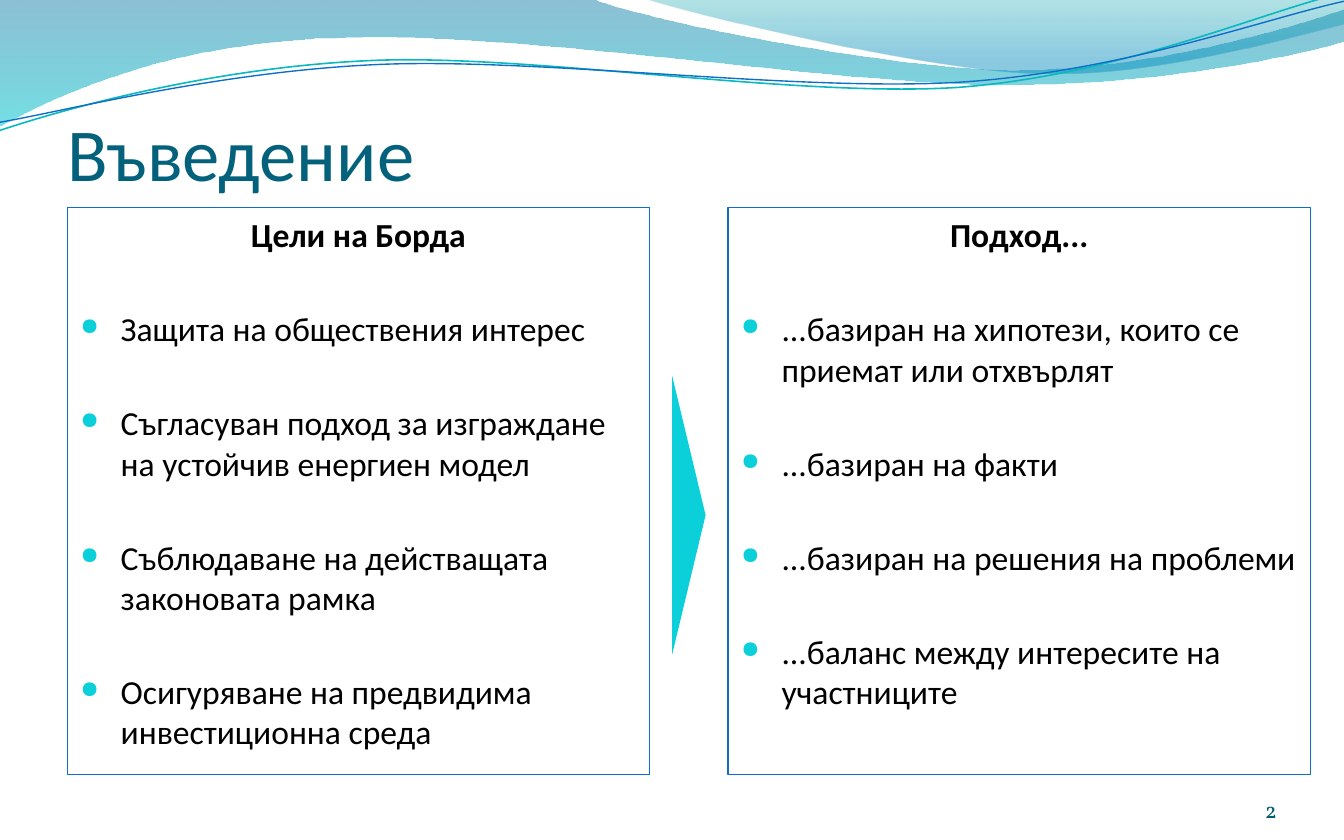
"""Build the introduction slide: two framed lists under a wave banner."""
import lxml.etree
import pptx
import pptx.dml.color
import pptx.enum.shapes
import pptx.enum.text
import pptx.oxml.ns
import pptx.util

WIDE, HIGH = pptx.util.Inches(10), pptx.util.Inches(6.25)
COLS, ROWS = 120, 75
FACE = "Calibri"
HUES = {
    "title": "04617B", "page": "045D75", "text": "000000", "frame": "0F6FC6",
    "mark": "0BD0D9", "teal": "0AB8BF", "deep": "0074A1", "aqua": "00C6CF",
    "sea": "00A1A9", "sky": "008BBF",
}
BANDS = [
    ((0, 0), [(4.4, -0.01), (4.76, 0.14, 6.64, 0.52, 7.58, 0.52),
              (8.53, 0.52, 9.58, 0.21, 10, 0.07), (10.01, 0.3),
              (9.83, 0.37, 8.7, 0.63, 7.46, 0.63),
              (6.22, 0.63, 3.82, 0.23, 2.57, 0.28),
              (1.29, 0.3, 0.46, 0.69, -0.01, 0.94)],
     [(0, "deep", 45), (1, "aqua", 55)]),
    ((4.79, -0.01), [(5.09, 0.09, 6.82, 0.51, 7.69, 0.54),
                     (8.56, 0.58, 9.61, 0.27, 10, 0.18), (10, 0)],
     [(0, "sea", 30), (0.8, "sky", 45)]),
]
WAVES = [
    ((0, 0.97), [(0.48, 0.81, 1.58, 0.5, 2.77, 0.45),
                 (3.95, 0.4, 5.92, 0.73, 7.13, 0.65),
                 (8.33, 0.56, 9.39, 0.09, 9.98, -0.05)], "teal", 0.85),
    ((0, 0.91), [(0.47, 0.83, 1.64, 0.53, 2.83, 0.48),
                 (4.03, 0.43, 5.97, 0.69, 7.17, 0.61),
                 (8.36, 0.53, 9.41, 0.14, 10, 0.01)], "frame", 0.75),
]
LISTS = [
    (6, "Цели на Борда", [
        "Защита на обществения интерес",
        "Съгласуван подход за изграждане на устойчив енергиен модел",
        "Съблюдаване на действащата законовата рамка",
        "Осигуряване на предвидима инвестиционна среда"]),
    (65, "Подход...", [
        "...базиран на хипотези, които се приемат или отхвърлят",
        "...базиран на факти",
        "...базиран на решения на проблеми",
        "...баланс между интересите на участниците"]),
]


def tint(name):
    """Return the named colour."""
    return pptx.dml.color.RGBColor.from_string(HUES[name])


def place(col, row, cols, rows):
    """Turn grid cells into a left, top, width and height."""
    return (int(WIDE * col / COLS), int(HIGH * row / ROWS),
            int(WIDE * cols / COLS), int(HIGH * rows / ROWS))


def node(parent, tag, **attrs):
    """Append a drawing element to its parent."""
    return lxml.etree.SubElement(parent, pptx.oxml.ns.qn(tag), attrs)


def pairs(part):
    """Group a flat row of inches into points."""
    return [(pptx.util.Inches(x), pptx.util.Inches(y))
            for x, y in zip(part[::2], part[1::2])]


def trace(slide, start, parts, close):
    """Draw an outline of straight and curved parts."""
    pen = slide.shapes.build_freeform(*pairs(start)[0])
    pen.add_line_segments([pairs(part)[-1] for part in parts], close=close)
    shape = pen.convert_to_shape()
    shape.shadow.inherit = False
    lines = list(shape.element.iter(pptx.oxml.ns.qn("a:lnTo")))
    for line, part in zip(lines, parts):
        if len(part) == 6:
            curve = node(line.getparent(), "a:cubicBezTo")
            for x, y in pairs(part):
                node(curve, "a:pt", x=str(x - shape.left), y=str(y - shape.top))
            line.getparent().replace(line, curve)
    return shape


def band(slide, start, parts, stops):
    """Draw a closed band with a see-through vertical gradient."""
    shape = trace(slide, start, parts, True)
    shape.line.fill.background()
    shape.fill.gradient()
    shape.fill.gradient_angle = 270
    for stop, (spot, name, _) in zip(shape.fill.gradient_stops, stops):
        stop.position = spot
        stop.color.rgb = tint(name)
    tones = shape.element.iter(pptx.oxml.ns.qn("a:srgbClr"))
    for tone, (_, _, alpha) in zip(tones, stops):
        node(tone, "a:alpha", val=str(alpha * 1000))


def wave(slide, start, parts, name, width):
    """Draw an open curved line."""
    shape = trace(slide, start, parts, False)
    shape.fill.background()
    shape.line.color.rgb = tint(name)
    shape.line.width = pptx.util.Pt(width)


def style(para, size, name, face=FACE, bold=False):
    """Set the font of a paragraph."""
    font = para.font
    font.size, font.name, font.bold = pptx.util.Pt(size), face, bold
    font.color.rgb = tint(name)


def label(slide, spot, text, size, name, face, align, top=0):
    """Add a line of text that rests on the bottom of its box."""
    frame = slide.shapes.add_textbox(*place(*spot)).text_frame
    frame.word_wrap = True
    frame.vertical_anchor = pptx.enum.text.MSO_ANCHOR.BOTTOM
    frame.margin_left = frame.margin_right = frame.margin_bottom = 0
    frame.margin_top = pptx.util.Inches(top)
    para = frame.paragraphs[0]
    para.text, para.alignment = text, align
    style(para, size, name, face)


def dot(para):
    """Give a paragraph a round coloured bullet on a hanging indent."""
    props = para._p.get_or_add_pPr()
    hang = int(WIDE * 0.03)
    props.set("marL", str(hang))
    props.set("indent", str(-hang))
    node(node(props, "a:buClr"), "a:srgbClr", val=HUES["mark"])
    node(props, "a:buSzPct", val="70000")
    node(props, "a:buChar", char="●")


def panel(slide, col, head, items):
    """Add a framed list with a centred heading."""
    shape = slide.shapes.add_shape(pptx.enum.shapes.MSO_SHAPE.RECTANGLE,
                                   *place(col, 18.52, 52, 50.64))
    shape.shadow.inherit = False
    shape.fill.background()
    shape.line.color.rgb = tint("frame")
    shape.line.width = pptx.util.Pt(0.75)
    frame = shape.text_frame
    frame.word_wrap = True
    frame.vertical_anchor = pptx.enum.text.MSO_ANCHOR.TOP
    para = frame.paragraphs[0]
    para.text, para.alignment = head, pptx.enum.text.PP_ALIGN.CENTER
    style(para, 18, "text", bold=True)
    for item in items:
        para = frame.add_paragraph()
        para.text, para.alignment = item, pptx.enum.text.PP_ALIGN.LEFT
        para.space_before = pptx.util.Pt(28.8)
        style(para, 18, "text")
        dot(para)


def wedge(slide):
    """Add the triangle that points from the goals to the approach."""
    shape = slide.shapes.add_shape(pptx.enum.shapes.MSO_SHAPE.ISOSCELES_TRIANGLE,
                                   *place(49, 44.5, 25, 3))
    shape.rotation = 90
    shape.shadow.inherit = False
    shape.fill.solid()
    shape.fill.fore_color.rgb = tint("mark")
    shape.line.fill.background()


def main():
    """Build and save the slide."""
    deck = pptx.Presentation()
    deck.slide_width, deck.slide_height = WIDE, HIGH
    slide = deck.slides.add_slide(deck.slide_layouts[6])
    for item in BANDS:
        band(slide, *item)
    for item in WAVES:
        wave(slide, *item)
    align = pptx.enum.text.PP_ALIGN
    label(slide, (6, 5, 108, 12.5), "Въведение", 40, "title", FACE, align.LEFT, 0.05)
    for item in LISTS:
        panel(slide, *item)
    wedge(slide)
    label(slide, (104, 69.5, 10, 4), "2", 12, "page", "Vollkorn", align.RIGHT)
    deck.save("out.pptx")


if __name__ == "__main__":
    main()
